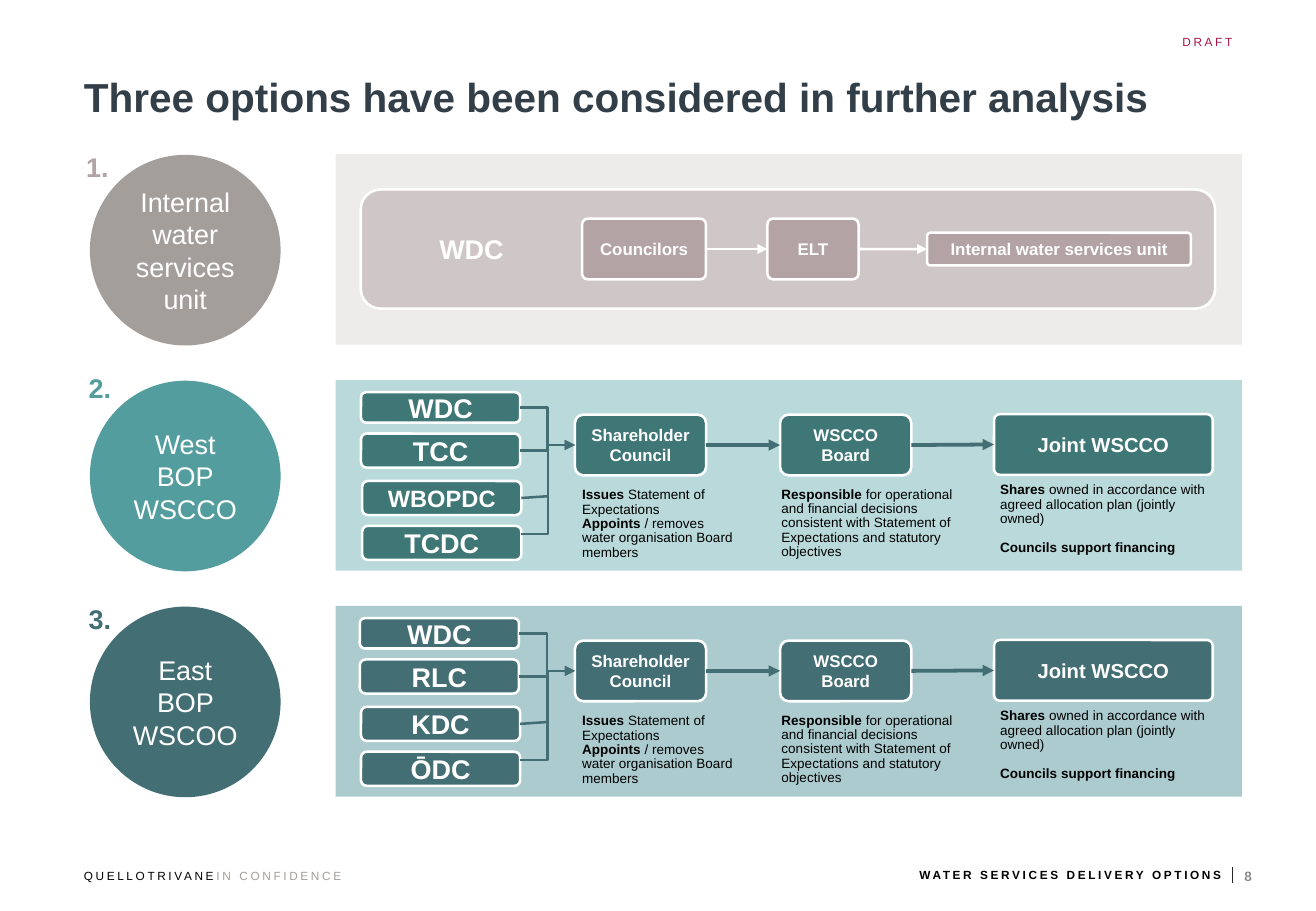
import dataclasses
import typing

import pptx
import pptx.dml.color
import pptx.enum.shapes
import pptx.enum.text
import pptx.oxml.ns
import pptx.util
from lxml import etree

Pt = pptx.util.Pt
RGB = pptx.dml.color.RGBColor
Kind = pptx.enum.shapes.MSO_SHAPE
Join = pptx.enum.shapes.MSO_CONNECTOR
Align = pptx.enum.text.PP_ALIGN
Anchor = pptx.enum.text.MSO_ANCHOR
qn = pptx.oxml.ns.qn

WHITE = RGB(0xFF, 0xFF, 0xFF)
BLACK = RGB(0, 0, 0)
INK = RGB(0x33, 0x3F, 0x48)
RED = RGB(0xA6, 0x15, 0x4B)
GREY = RGB(0x8C, 0x8C, 0x8C)
RULE = RGB(0x26, 0x26, 0x26)
STONE = RGB(0xA4, 0x9E, 0x9B)
MAUVE = RGB(0xB3, 0xA3, 0xA4)
PALE = RGB(0xED, 0xEC, 0xEB)
TEAL = RGB(0x54, 0x9D, 0x9E)
PINE = RGB(0x3F, 0x76, 0x76)
MIST = RGB(0xB9, 0xD9, 0xDA)
SLATE = RGB(0x43, 0x6E, 0x73)
HAZE = RGB(0xAC, 0xCB, 0xCF)

TOP, PITCH, SIDE = 91.4, 133.9, 113
LEAD = Pt(8.5)


class Area(typing.NamedTuple):
    x: float
    y: float
    w: float
    h: float


class Para(typing.NamedTuple):
    bold: str
    plain: str = ""
    gap: float = 0


@dataclasses.dataclass
class Look:
    size: float
    color: RGB
    bold: bool = True
    align: Align = Align.LEFT
    lead: float | None = None
    track: int = 0


@dataclasses.dataclass
class Option:
    name: list[str]
    hue: RGB
    back: RGB
    mark: RGB
    spot: tuple[float, float]


@dataclasses.dataclass
class Group:
    row: int
    left: float
    fill: RGB
    names: list[tuple[str, int]]


OPTIONS = [
    Option(["Internal water services unit"], STONE, PALE, MAUVE, (51.1, 91.4)),
    Option(["West BOP", "WSCCO"], TEAL, MIST, TEAL, (52.6, 222.5)),
    Option(["East BOP WSCOO"], SLATE, HAZE, SLATE, (52.6, 359.3)),
]
GROUPS = [
    Group(1, 213.9, PINE, [("WDC", 16), ("TCC", 16), ("WBOPDC", 14), ("TCDC", 16)]),
    Group(2, 213.2, SLATE, [("WDC", 16), ("RLC", 16), ("KDC", 16), ("ŌDC", 16)]),
]
SLOTS = [(0, 7.2, 18), (0, 31.7, 20.2), (0.7, 59.8, 20.2), (0.7, 86.4, 20.2)]
NOTES = [
    (Area(344.9, 58.7, 90, 53.3), Anchor.MIDDLE, [
        Para("Issues", " Statement of Expectations"),
        Para("Appoints", " / removes water organisation Board members")]),
    (Area(463, 61.2, 102.2, 47.5), Anchor.MIDDLE, [
        Para("Responsible", " for operational and financial decisions consistent "
             "with Statement of Expectations and statutory objectives")]),
    (Area(592.6, 61.2, 129.6, 52.6), Anchor.TOP, [
        Para("Shares", " owned in accordance with agreed allocation plan (jointly owned)"),
        Para("Councils support financing", gap=8.5)]),
]

deck = pptx.Presentation()
deck.slide_width, deck.slide_height = Pt(779.76), Pt(540)
slide = deck.slides.add_slide(deck.slide_layouts[6])


def write(frame, paras: list[Para], look: Look) -> None:
    """Fill a frame; only the bold part takes the look's weight."""
    frame.word_wrap = True
    for i, item in enumerate(paras):
        para = frame.paragraphs[0] if i == 0 else frame.add_paragraph()
        form = {"alignment": look.align, "line_spacing": look.lead,
                "space_before": Pt(item.gap) if item.gap else None}
        for key, value in form.items():
            setattr(para, key, value)
        for part, bold in ((item.bold, look.bold), (item.plain, False)):
            if not part:
                continue
            run = para.add_run()
            run.text = part
            font = {"name": "Arial", "size": Pt(look.size), "bold": bold}
            for key, value in font.items():
                setattr(run.font, key, value)
            run.font.color.rgb = look.color
            if look.track:
                run.font._element.set("spc", str(look.track))


def label(area: Area, paras: list[Para], look: Look, anchor: Anchor = Anchor.MIDDLE) -> None:
    frame = slide.shapes.add_textbox(*map(Pt, area)).text_frame
    for edge in ("left", "top", "right", "bottom"):
        setattr(frame, f"margin_{edge}", 0)
    frame.vertical_anchor = anchor
    write(frame, paras, look)


def block(kind: Kind, area: Area, fill: RGB, edge: bool = False, curve: float | None = None):
    shape = slide.shapes.add_shape(kind, *map(Pt, area))
    shape.shadow.inherit = False
    shape.fill.solid()
    shape.fill.fore_color.rgb = fill
    if edge:
        shape.line.color.rgb = WHITE
        shape.line.width = Pt(1.5)
    else:
        shape.line.fill.background()
    if curve is not None:
        shape.adjustments[0] = curve
    return shape


def box(area: Area, fill: RGB, text: str, size: float, curve: float | None = None):
    shape = block(Kind.ROUNDED_RECTANGLE, area, fill, True, curve)
    write(shape.text_frame, [Para(text)], Look(size, WHITE, align=Align.CENTER))
    return shape


def link(ends: tuple[float, ...], color: RGB, width: float, start=None, stop=None,
         kind: Join = Join.STRAIGHT, head: bool = True) -> None:
    """Draw a line, joined from a right side to a left side where shapes are given."""
    line = slide.shapes.add_connector(kind, *map(Pt, ends))
    if start is not None:
        line.begin_connect(start, 3)
    if stop is not None:
        line.end_connect(stop, 1)
    line.line.color.rgb = color
    line.line.width = Pt(width)
    if head:
        etree.SubElement(line.line._get_or_add_ln(), qn("a:tailEnd"), type="triangle")
    etree.SubElement(line._element.spPr, qn("a:effectLst"))


def internal() -> None:
    frame = block(Kind.ROUNDED_RECTANGLE, Area(213.8, 112.3, 506.2, 70.6), MAUVE, True)
    tint = frame.fill._xPr.find(qn("a:solidFill"))[0]
    etree.SubElement(tint, qn("a:alpha"), val="50000")
    write(frame.text_frame, [Para("WDC")], Look(16, WHITE))
    frame.text_frame.paragraphs[0]._p.get_or_add_pPr().set("marL", str(Pt(36)))
    chain = [box(area, MAUVE, text, 10, 0.096) for area, text in (
        (Area(344.9, 129.6, 73.4, 36), "Councilors"),
        (Area(454.7, 129.6, 54, 36), "ELT"),
        (Area(549.4, 138, 156.2, 19.4), "Internal water services unit"))]
    for start, stop in zip(chain, chain[1:]):
        link((0, 0, 0, 0), WHITE, 1.5, start, stop)


def joint(group: Group) -> None:
    top = TOP + PITCH * group.row
    towns = [box(Area(group.left + dx, top + dy, 94.3, h), group.fill, name, size)
             for (dx, dy, h), (name, size) in zip(SLOTS, group.names)]
    chain = [box(Area(x, top + dy, w, 36), group.fill, text, size, curve)
             for x, dy, w, text, size, curve in (
                 (340.6, 20.5, 77.8, "Shareholder Council", 10, 0.142),
                 (462.2, 20.5, 77.8, "WSCCO Board", 10, 0.142),
                 (589, 20.2, 129.6, "Joint WSCCO", 12, 0.096))]
    for start, stop in zip(chain, chain[1:]):
        link((0, 0, 0, 0), SLATE, 2.25, start, stop)
    edge = group.left + 95
    for town in towns[:2]:
        link((0, 0, 0, 0), SLATE, 1.5, town, chain[0], Join.ELBOW)
    link((edge, top + 91.4, 0, 0), SLATE, 1.5, None, chain[0], Join.ELBOW)
    link((0, 0, edge + 16.2, top + 68.8), SLATE, 1.5, towns[2], head=False)
    for area, anchor, paras in NOTES:
        label(area._replace(y=top + area.y), paras, Look(8, BLACK, lead=LEAD), anchor)


def frame() -> None:
    """Draw the title, the draft mark and the footer."""
    small = Look(7, BLACK, False, lead=LEAD, track=160)
    alter = dataclasses.replace
    for area, text, look in (
        (Area(49.7, 16.6, 680.4, 85), "Three options have been considered in further analysis",
         Look(24, INK, lead=0.9)),
        (Area(653.8, 16.6, 76.3, 16.6), "DRAFT", alter(small, color=RED, align=Align.RIGHT)),
        (Area(49.7, 513.4, 78, 11.5), "QUELLOTRIVANE", small),
        (Area(128.2, 513.4, 144.7, 11.5), "IN CONFIDENCE", alter(small, color=STONE)),
        (Area(298.1, 512.9, 425.5, 11.5), "WATER SERVICES DELIVERY OPTIONS",
         alter(small, bold=True, align=Align.RIGHT)),
        (Area(737.3, 513.4, 18.7, 11.5), "8", Look(8, GREY)),
    ):
        label(area, [Para(text)], look)
    link((730.1, 514.1, 730.1, 523.4), RULE, 0.5, head=False)


def main() -> None:
    frame()
    for i, option in enumerate(OPTIONS):
        top = TOP + PITCH * i
        block(Kind.RECTANGLE, Area(198.9, top, 537, SIDE), option.back)
        disc = block(Kind.OVAL, Area(53.3, top + 0.4, SIDE, SIDE), option.hue)
        write(disc.text_frame, [Para(line) for line in option.name],
              Look(16, WHITE, False, Align.CENTER))
        label(Area(*option.spot, 74.9, 25.2), [Para(f"{i + 1}.")],
              Look(16, option.mark, lead=LEAD))
    internal()
    for group in GROUPS:
        joint(group)
    deck.save("out.pptx")


if __name__ == "__main__":
    main()
